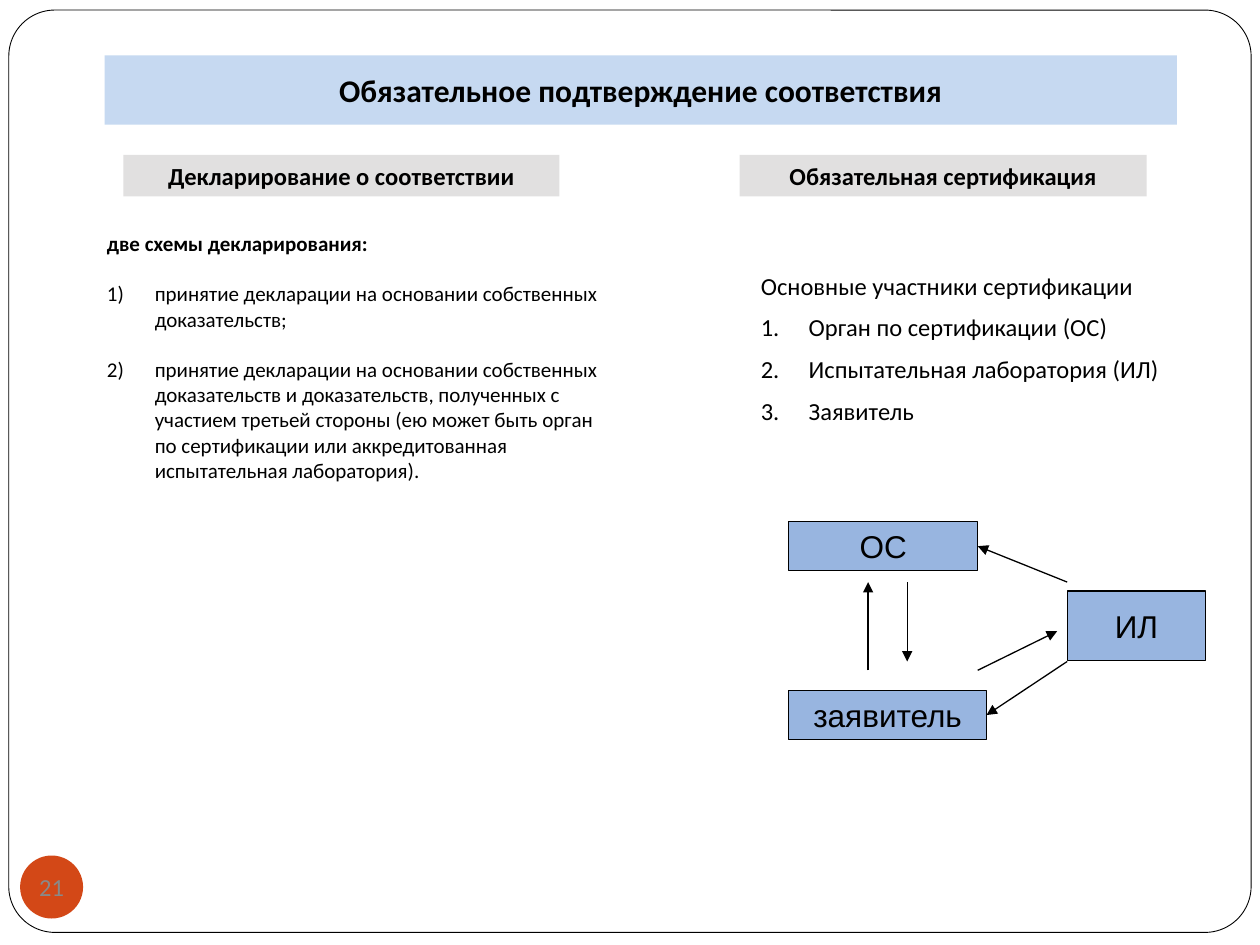
from lxml import etree
from pptx import Presentation
from pptx import util as u
from pptx.dml.color import RGBColor
from pptx.enum import shapes, text
from pptx.oxml import ns

COLORS = {
    "ink": "000000",
    "title": "C6D9F1",
    "heading": "E1E0E0",
    "node": "98B5E0",
    "badge": "D34817",
    "number": "898989",
}
INDENT = 0.38


def color(name):
    return RGBColor.from_string(COLORS[name])


def inches(*values):
    return [u.Inches(value) for value in values]


def format_paragraph(paragraph, size, bold=False, font="Calibri", ink="ink",
                     alignment=text.PP_ALIGN.CENTER):
    paragraph.alignment = alignment
    for run in paragraph.runs:
        run.font.name = font
        run.font.size = u.Pt(size)
        run.font.bold = bold
        run.font.color.rgb = color(ink)


def set_number(paragraph, style, start):
    properties = paragraph._p.get_or_add_pPr()
    number = etree.SubElement(properties, ns.qn("a:buAutoNum"), type=style)
    if start > 1:
        number.set("startAt", str(start))


def add_box(slide, kind, box, fill=None, line_width=None):
    shape = slide.shapes.add_shape(kind, *inches(*box))
    shape.shadow.inherit = False
    if fill:
        shape.fill.solid()
        shape.fill.fore_color.rgb = color(fill)
    else:
        shape.fill.background()
    if line_width:
        shape.line.color.rgb = color("ink")
        shape.line.width = u.Pt(line_width)
    else:
        shape.line.fill.background()
    return shape


def add_label(shape, label, size, **style):
    frame = shape.text_frame
    frame.text = label
    frame.word_wrap = False
    frame.vertical_anchor = text.MSO_ANCHOR.MIDDLE
    format_paragraph(frame.paragraphs[0], size, **style)


def add_frame(slide, box):
    frame = add_box(slide, shapes.MSO_SHAPE.ROUNDED_RECTANGLE, box, line_width=0.5)
    frame.adjustments[0] = 0.05


def add_title(slide, box, label):
    title = slide.shapes.title
    title.left, title.top, title.width, title.height = inches(*box)
    geometry = etree.Element(ns.qn("a:prstGeom"), prst="roundRect")
    etree.SubElement(geometry, ns.qn("a:avLst"))
    title._element.spPr.find(ns.qn("a:xfrm")).addnext(geometry)
    title.fill.solid()
    title.fill.fore_color.rgb = color("title")
    add_label(title, label, 18, bold=True)


def add_page_number(slide, box, number):
    badge = add_box(slide, shapes.MSO_SHAPE.OVAL, box, "badge")
    add_label(badge, number, 14, ink="number")


def add_heading(slide, box, label):
    heading = add_box(slide, shapes.MSO_SHAPE.RECTANGLE, box, "heading")
    add_label(heading, label, 14, bold=True)


def add_list(slide, box, intro, items, number_style, size, gap, bold_intro=False):
    frame = slide.shapes.add_textbox(*inches(*box)).text_frame
    frame.word_wrap = True
    for index, label in enumerate([intro, *items]):
        paragraph = frame.add_paragraph() if index else frame.paragraphs[0]
        paragraph.text = label
        format_paragraph(paragraph, size, bold=bold_intro and index == 0,
                         alignment=text.PP_ALIGN.LEFT)
        properties = paragraph._p.get_or_add_pPr()
        properties.set("marL", str(u.Inches(INDENT)))
        properties.set("indent", str(u.Inches(-INDENT)))
        if index:
            paragraph.space_before = u.Pt(gap)
            set_number(paragraph, number_style, index)


def add_arrow(slide, start, end):
    arrow = slide.shapes.add_connector(
        shapes.MSO_CONNECTOR.STRAIGHT, *inches(*start, *end))
    arrow.line.color.rgb = color("ink")
    arrow.line.width = u.Pt(0.75)
    etree.SubElement(arrow.line._get_or_add_ln(), ns.qn("a:tailEnd"), type="triangle")
    etree.SubElement(arrow._element.spPr, ns.qn("a:effectLst"))
    return arrow


def add_scheme(slide, box):
    left, top, width, height = box

    def at(x, y):
        return left + x, top + y

    def add_node(label, x, y, node_width, node_height):
        node = add_box(slide, shapes.MSO_SHAPE.RECTANGLE,
                       (*at(x, y), node_width, node_height), "node", 0.75)
        add_label(node, label, 18, font="Arial")
        return node

    lab_x = width - 1.1
    body = add_node("ОС", 0, 0, 1.5, 0.39)
    lab = add_node("ИЛ", lab_x, 0.55, 1.1, 0.55)
    applicant = add_node("заявитель", 0, height - 0.39, 1.57, 0.39)

    add_arrow(slide, at(0.63, 1.18), at(0.63, 0.48))
    add_arrow(slide, at(0.94, 0.48), at(0.94, 1.11))
    add_arrow(slide, at(1.5, 1.18), at(2.13, 0.87))
    for start_y, node in ((0.48, body), (1.11, applicant)):
        start = at(lab_x, start_y)
        add_arrow(slide, start, start).end_connect(node, 3)


def main():
    presentation = Presentation()
    presentation.slide_width, presentation.slide_height = inches(10, 7.5)
    slide = presentation.slides.add_slide(presentation.slide_layouts[5])

    add_title(slide, (0.83, 0.44, 8.51, 0.55), "Обязательное подтверждение соответствия")
    add_frame(slide, (0.07, 0.08, 9.86, 7.32))
    add_page_number(slide, (0.16, 6.79, 0.5, 0.5), "21")

    add_heading(slide, (0.98, 1.23, 3.46, 0.33), "Декларирование о соответствии")
    add_list(
        slide, (0.75, 1.78, 4.25, 2.3), "две схемы декларирования:",
        ["принятие декларации на основании собственных доказательств;",
         "принятие декларации на основании собственных доказательств и "
         "доказательств, полученных с участием третьей стороны (ею может быть "
         "орган по сертификации или аккредитованная испытательная лаборатория)."],
        "arabicParenR", 12, 14.4, bold_intro=True)

    add_heading(slide, (5.87, 1.23, 3.23, 0.33), "Обязательная сертификация")
    add_list(
        slide, (5.94, 2.1, 3.47, 1.61), "Основные участники сертификации",
        ["Орган по сертификации (ОС)", "Испытательная лаборатория (ИЛ)", "Заявитель"],
        "arabicPeriod", 14, 7)
    add_scheme(slide, (6.26, 4.14, 3.31, 1.73))

    presentation.save("out.pptx")


if __name__ == "__main__":
    main()
